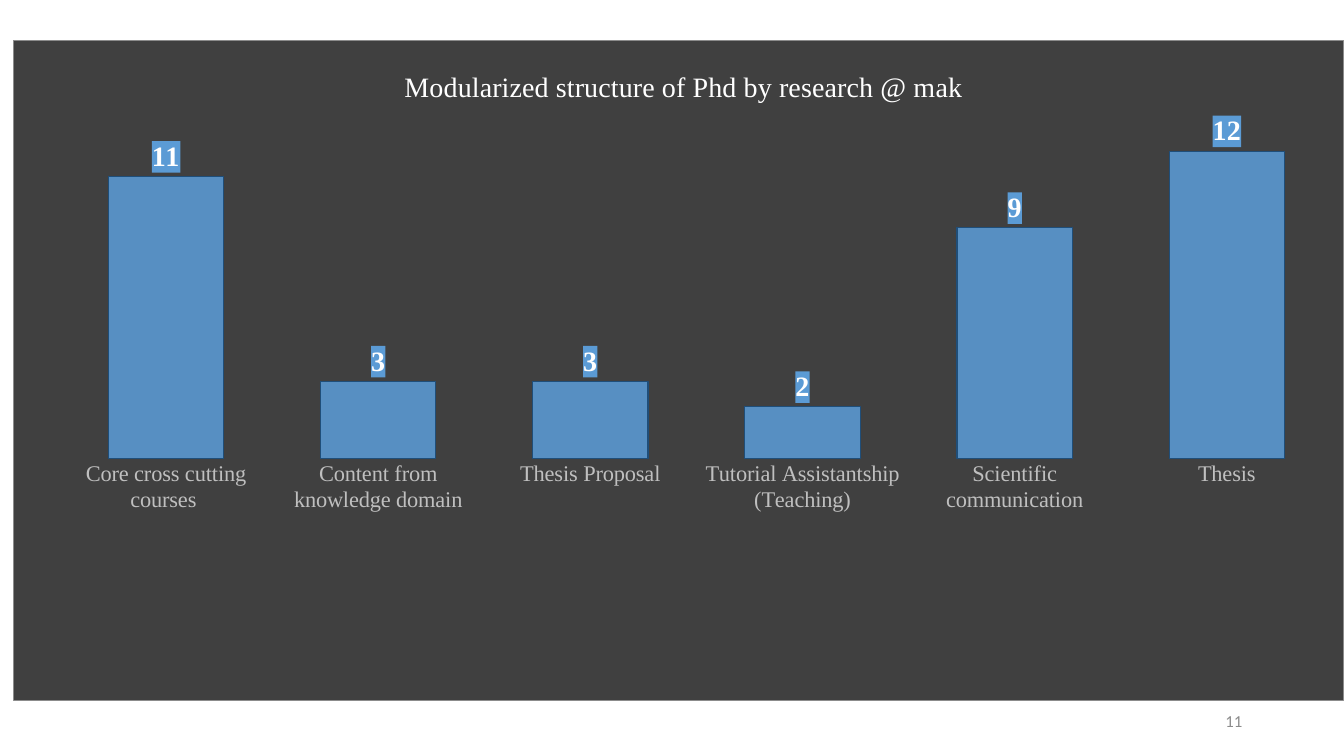
from lxml import etree
from pptx import Presentation
from pptx.chart.data import CategoryChartData
from pptx.dml.color import RGBColor
from pptx.enum import chart as ch, text as tx
from pptx.oxml import parse_xml
from pptx.oxml.ns import nsdecls, qn
from pptx.util import Inches, Pt

WHITE = RGBColor(0xFF, 0xFF, 0xFF)
CHARCOAL = RGBColor(0x40, 0x40, 0x40)
GRAY = RGBColor(0x8C, 0x8C, 0x8C)
SILVER = RGBColor(0xBF, 0xBF, 0xBF)
BLUE = RGBColor(0x5B, 0x9B, 0xD5)
NAVY = RGBColor(0x1F, 0x4E, 0x79)
BLACK = RGBColor(0, 0, 0)
SERIF, SANS = "Times New Roman", "Calibri"

TITLE = "Modularized structure of Phd by research @ mak"
MODULES = {
    "Core cross cutting courses ": 11,
    "Content from knowledge domain": 3,
    "Thesis Proposal": 3,
    "Tutorial Assistantship (Teaching)": 2,
    "Scientific communication": 9,
    "Thesis": 12,
}


def style_font(font, size, color, name=SERIF, bold=False):
    font.size, font.name, font.bold = Pt(size), name, bold
    font.color.rgb = color


def write_text(frame, content, align=tx.PP_ALIGN.CENTER, **font_format):
    paragraph = frame.paragraphs[0]
    paragraph.alignment = align
    run = paragraph.add_run()
    run.text = content
    style_font(run.font, **font_format)


def set_layout(parent, index, inner=False, **fractions):
    """Place a chart part by fractions (x, y, w, h) of the chart area."""
    for old in parent.findall(qn("c:layout")):
        parent.remove(old)
    layout = etree.Element(qn("c:layout"))
    manual = etree.SubElement(layout, qn("c:manualLayout"))
    settings = {"layoutTarget": "inner"} if inner else {}
    settings.update(xMode="edge", yMode="edge", **fractions)
    for tag, value in settings.items():
        etree.SubElement(manual, qn(f"c:{tag}")).set("val", str(value))
    parent.insert(index, layout)


def fill_xml(color, border=None):
    line = (f'<a:ln w="{Pt(0.5)}"><a:solidFill><a:srgbClr val="{border}"/></a:solidFill></a:ln>'
            if border else "")
    return parse_xml(f'<c:spPr {nsdecls("c", "a")}><a:solidFill><a:srgbClr val="{color}"/>'
                     f"</a:solidFill>{line}</c:spPr>")


def style_axes(chart):
    categories, values = chart.category_axis, chart.value_axis
    categories.major_tick_mark = ch.XL_TICK_MARK.NONE
    categories.format.line.fill.background()
    style_font(categories.tick_labels.font, 16, SILVER)
    values.minimum_scale, values.maximum_scale = 0, 14
    values.has_major_gridlines = False
    values.visible = False


def style_bars(plot):
    plot.gap_width = 84
    plot.vary_by_categories = False
    bars = plot.series[0].format
    bars.fill.solid()
    bars.fill.fore_color.rgb = BLUE
    bars.line.color.rgb = NAVY
    bars.line.width = Pt(0.75)
    bar_color = plot.series[0]._element.find(f"{qn('c:spPr')}/{qn('a:solidFill')}/{qn('a:srgbClr')}")
    etree.SubElement(bar_color, qn("a:alpha")).set("val", "88000")

    plot.has_data_labels = True
    labels = plot.data_labels
    labels.show_value = True
    labels.position = ch.XL_LABEL_POSITION.OUTSIDE_END
    style_font(labels.font, 20, WHITE, bold=True)
    labels._element.find(qn("c:txPr")).addprevious(fill_xml(BLUE))


def add_module_chart(slide):
    data = CategoryChartData()
    data.categories = list(MODULES)
    data.add_series("Series 1", list(MODULES.values()))
    chart = slide.shapes.add_chart(
        ch.XL_CHART_TYPE.COLUMN_CLUSTERED,
        Inches(0.13), Inches(0.4), Inches(13.2), Inches(6.55), data).chart
    style_font(chart.font, 10, BLACK, SANS)
    chart.has_legend = False
    write_text(chart.chart_title.text_frame, TITLE, size=20, color=WHITE)
    chart.chart_title.include_in_layout = False
    style_axes(chart)
    style_bars(chart.plots[0])

    body = chart._chartSpace.find(qn("c:chart"))
    body.addnext(fill_xml(CHARCOAL, GRAY))
    set_layout(body.find(qn("c:title")), 1, x=0.29, y=0.035)
    set_layout(body.find(qn("c:plotArea")), 0, inner=True, x=0.035, y=0.09, w=0.957, h=0.543)


def add_page_number(slide, number):
    frame = slide.shapes.add_textbox(
        Inches(9.42), Inches(6.95), Inches(3), Inches(0.4)).text_frame
    frame.word_wrap = True
    frame.vertical_anchor = tx.MSO_ANCHOR.MIDDLE
    write_text(frame, number, tx.PP_ALIGN.RIGHT, size=12, color=GRAY, name=SANS)


def main():
    deck = Presentation()
    deck.slide_width, deck.slide_height = Inches(13.33), Inches(7.5)
    slide = deck.slides.add_slide(deck.slide_layouts[6])
    add_page_number(slide, "11")
    add_module_chart(slide)
    deck.save("out.pptx")


if __name__ == "__main__":
    main()
